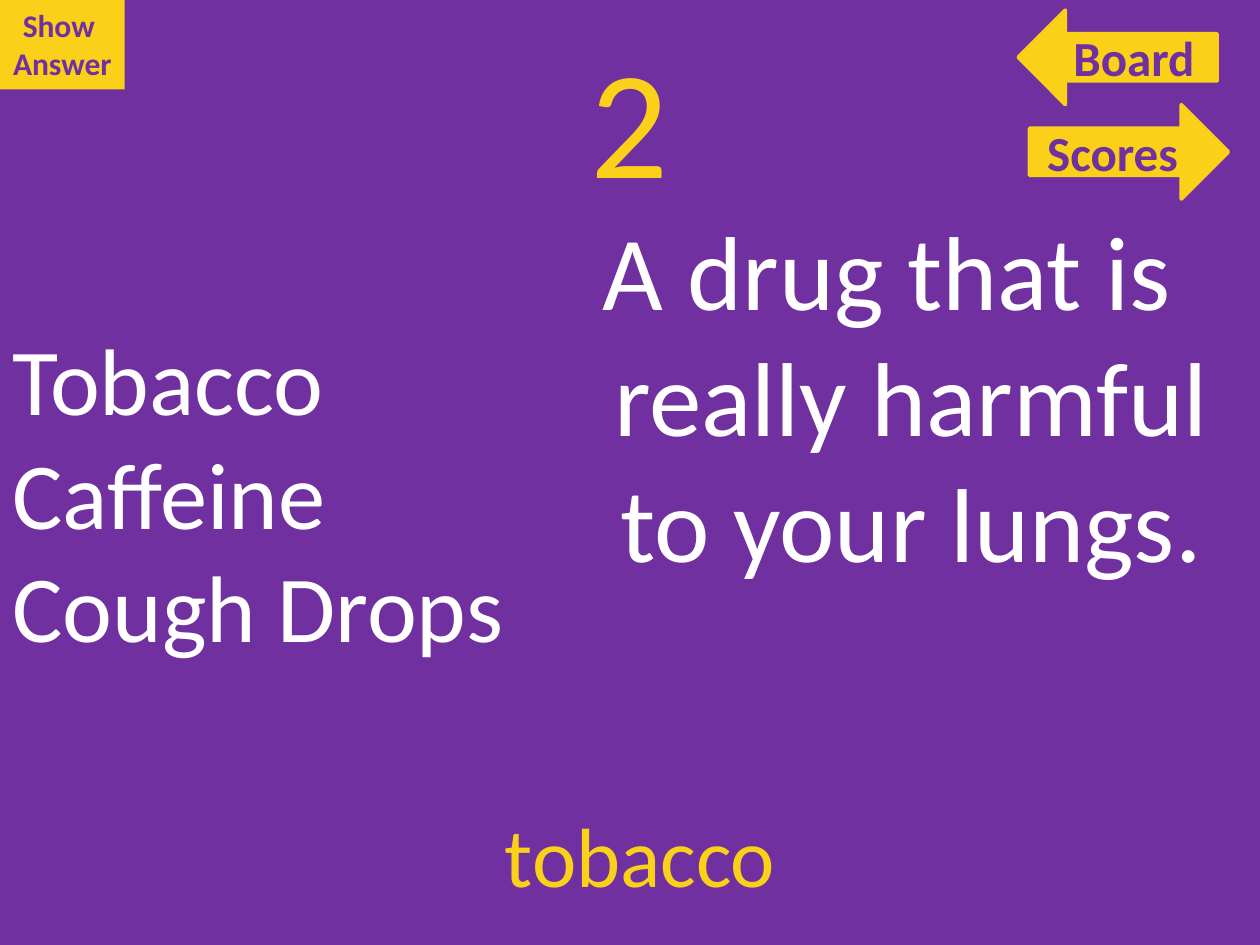
from pptx import Presentation
from pptx.dml.color import RGBColor
from pptx.enum import shapes, text
from pptx.util import Inches, Pt

PURPLE, GOLD, WHITE = "7030A0", "FBD019", "FFFFFF"
FONT = "Calibri"
LEFT, CENTER = text.PP_ALIGN.LEFT, text.PP_ALIGN.CENTER
TOP, MIDDLE = text.MSO_ANCHOR.TOP, text.MSO_ANCHOR.MIDDLE

# Content: lines, (left, top, width, height), size, colour, alignment, anchor
TEXTS = {
    "number": (["2"], (0.5, 0.3, 9, 1.25), 88, GOLD, CENTER, MIDDLE),
    "answer": (["tobacco"], (0.58, 6.33, 9, 0.91), 48, GOLD, CENTER, TOP),
    "choices": (["Tobacco", "Caffeine", "Cough Drops"],
                (0, 2.5, 4.25, 4.58), 54, WHITE, LEFT, TOP),
    "question": (["A drug that is really harmful to your lungs."],
                 (4.08, 1.58, 5.92, 4.83), 60, WHITE, CENTER, TOP),
}
# Navigation: label, arrow shape, arrow position, label position
ARROWS = [
    ("Board", shapes.MSO_SHAPE.LEFT_ARROW, (8.08, 0.08), (8.25, 0.17)),
    ("Scores", shapes.MSO_SHAPE.RIGHT_ARROW, (8.17, 0.83), (8.08, 0.92)),
]
ARROW_SIZE, LABEL_SIZE = (1.58, 0.75), (1.5, 0.58)
HANGING = 0.38


def color(value):
    return RGBColor.from_string(value)


def inches(area):
    return [Inches(length) for length in area]


def write(box, lines, size, ink, align=CENTER, anchor=TOP, bold=False, wrap=True):
    frame = box.text_frame
    frame.text = "\n".join(lines)
    frame.word_wrap = wrap
    frame.vertical_anchor = anchor
    for paragraph in frame.paragraphs:
        paragraph.alignment = align
        for span in paragraph.runs:
            span.font.name = FONT
            span.font.size = Pt(size)
            span.font.bold = bold
            span.font.color.rgb = color(ink)


def add_text(page, lines, area, *style, **options):
    box = page.shapes.add_textbox(*inches(area))
    write(box, lines, *style, **options)
    return box


def add_gold_shape(page, kind, area):
    shape = page.shapes.add_shape(kind, *inches(area))
    shape.shadow.inherit = False
    shape.fill.solid()
    shape.fill.fore_color.rgb = color(GOLD)
    shape.line.fill.background()
    return shape


deck = Presentation()
deck.slide_width, deck.slide_height = Inches(10), Inches(7.5)
page = deck.slides.add_slide(deck.slide_layouts[6])
page.background.fill.solid()
page.background.fill.fore_color.rgb = color(PURPLE)

# Number, question, choices and answer
boxes = {name: add_text(page, *entry) for name, entry in TEXTS.items()}
indent = boxes["question"].text_frame.paragraphs[0]._p.get_or_add_pPr()
indent.set("marL", str(Inches(HANGING)))
indent.set("indent", str(-Inches(HANGING)))

# Answer button
button = add_gold_shape(page, shapes.MSO_SHAPE.RECTANGLE, (0, 0, 0.99, 0.71))
write(button, ["Show ", "Answer"], 18, PURPLE, bold=True, wrap=False)

# Navigation arrows with their labels
for label, kind, arrow_at, label_at in ARROWS:
    arrow = add_gold_shape(page, kind, arrow_at + ARROW_SIZE)
    arrow.line.color.rgb = color(GOLD)
    arrow.line.width = Pt(2)
    add_text(page, [label], label_at + LABEL_SIZE, 28, PURPLE, bold=True)

deck.save("out.pptx")
